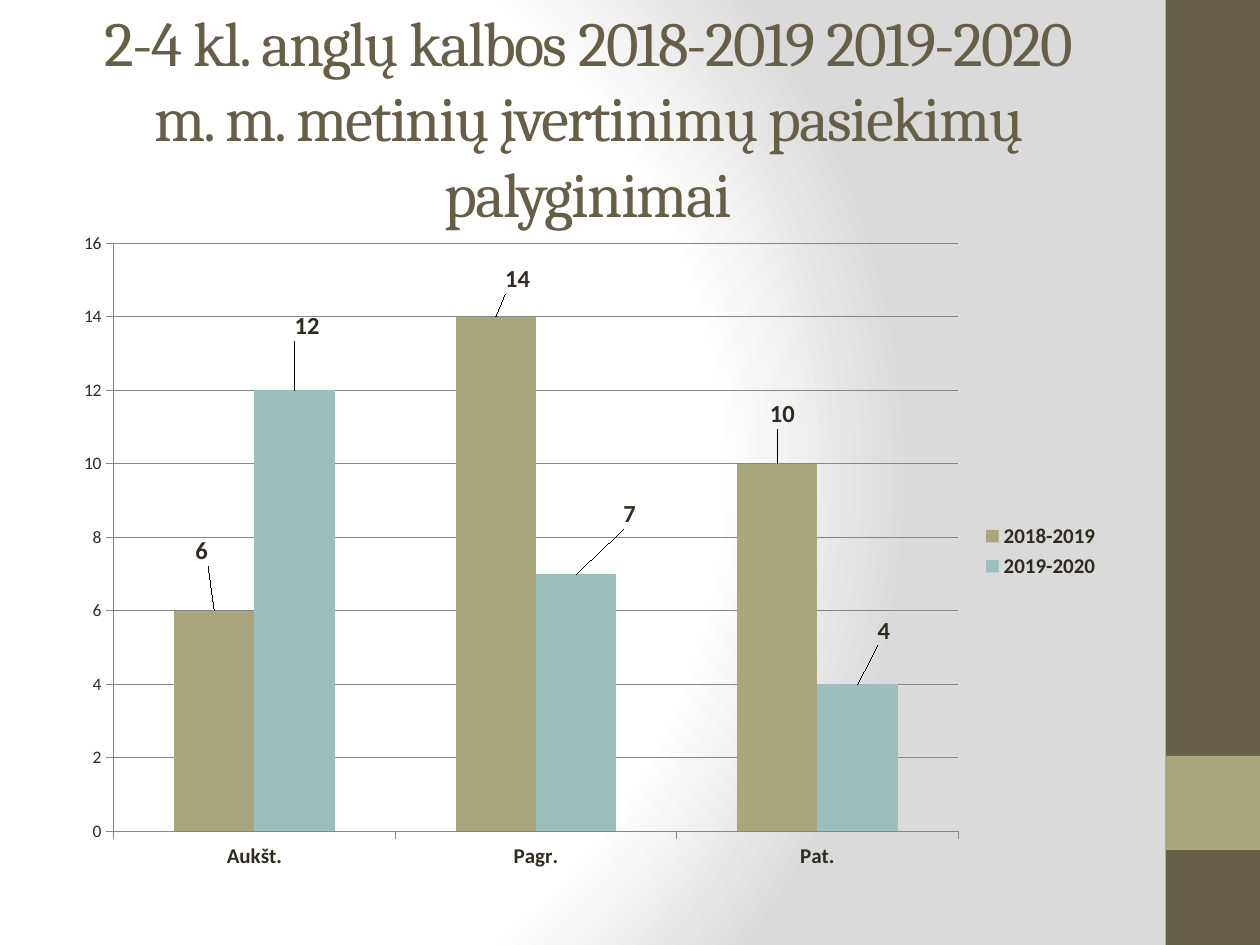
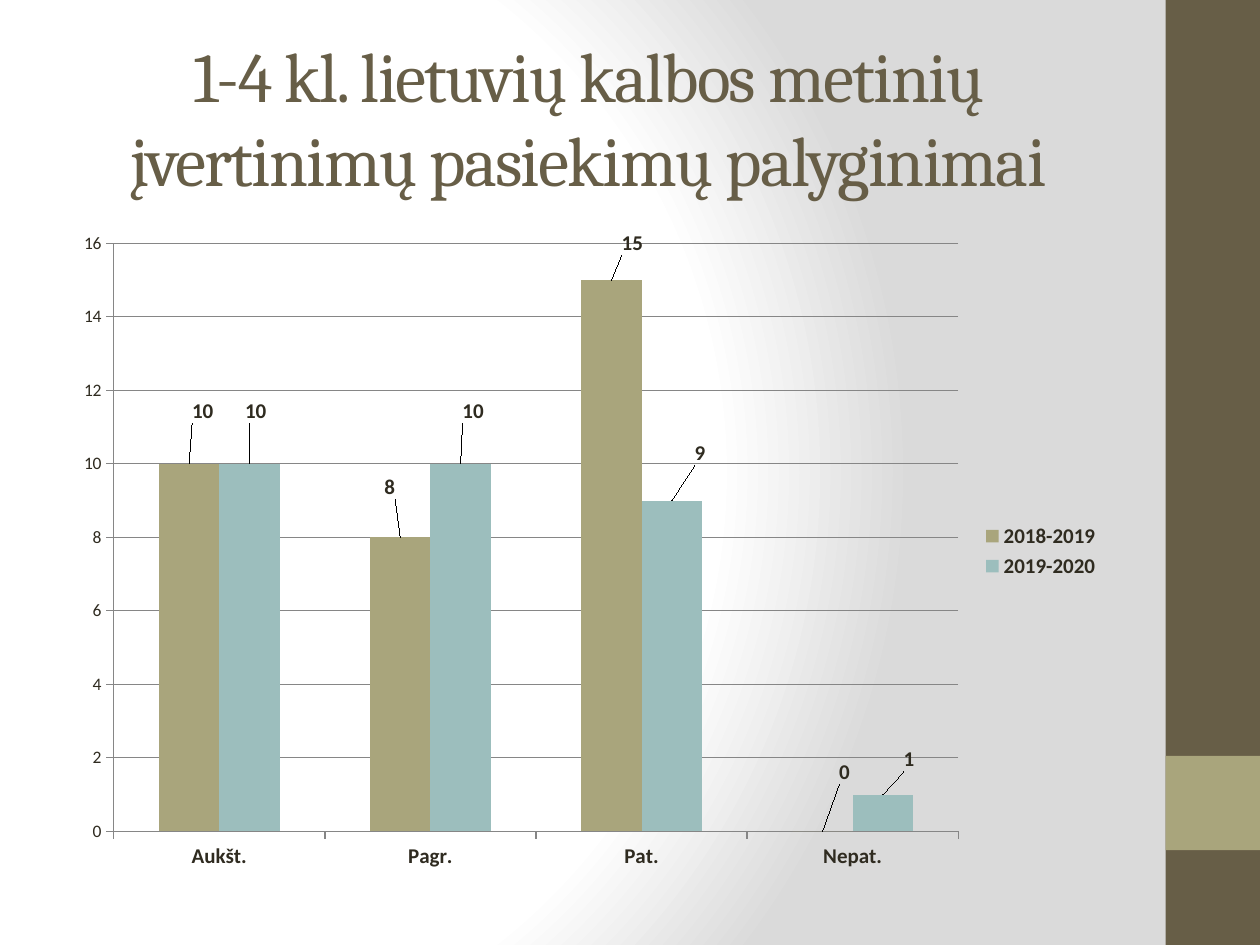
from lxml import etree
from pptx import Presentation
from pptx.chart.data import CategoryChartData
from pptx.dml.color import RGBColor
from pptx.enum.chart import XL_CHART_TYPE, XL_LABEL_POSITION, XL_LEGEND_POSITION, XL_TICK_MARK
from pptx.enum.shapes import MSO_SHAPE
from pptx.enum.text import MSO_ANCHOR, MSO_AUTO_SIZE, PP_ALIGN
from pptx.oxml import parse_xml
from pptx.oxml.ns import nsdecls, qn
from pptx.util import Cm, Pt

COLUMN = XL_CHART_TYPE.COLUMN_CLUSTERED
ABOVE = XL_LABEL_POSITION.OUTSIDE_END
RIGHT = XL_LEGEND_POSITION.RIGHT
OUT, NONE = XL_TICK_MARK.OUTSIDE, XL_TICK_MARK.NONE
RECT = MSO_SHAPE.RECTANGLE
MIDDLE, FIXED, CENTER = MSO_ANCHOR.MIDDLE, MSO_AUTO_SIZE.NONE, PP_ALIGN.CENTER

COLORS = {
    "brown": "675E47", "olive": "A9A57C", "teal": "9CBEBD",
    "ink": "2F2B20", "grid": "868686", "white": "FFFFFF", "gray": "DADADA",
}
HEAD, BODY = "Cambria", "Calibri"
WIDE, HIGH = 25.4, 19.05
TITLE = (1.27, 0.76, 21.16, 3.18)
CHART = (1.27, 4.44, 21.16, 13.34)
BANDS = [("brown", (23.5, 0, 1.9, HIGH)), ("olive", (23.5, 15.24, 1.9, 1.9))]
STOPS = [(0, "white"), (75, "white"), (100, "gray")]

# Label shifts are percentages of the chart's width and height.
SLIDES = [
    {
        "title": "2-4 kl. anglų kalbos 2018-2019 2019-2020 m. m. metinių įvertinimų pasiekimų palyginimai",
        "size": 36, "label": 14,
        "cats": ["Aukšt.", "Pagr.", "Pat."],
        "series": [
            ("2018-2019", "olive", [6, 14, 10], [(-1.2, -6), (2.1, -2.7), (0.5, -4.5)]),
            ("2019-2020", "teal", [12, 7, 4], [(1.2, -6.7), (5.1, -6), (2.5, -5.1)]),
        ],
    },
    {
        "title": "1-4 kl. lietuvių kalbos metinių įvertinimų pasiekimų palyginimai",
        "size": 40, "label": 12,
        "cats": ["Aukšt.", "Pagr.", "Pat.", "Nepat."],
        "series": [
            ("2018-2019", "olive", [10, 8, 15, 0],
             [(1.3, -5.3), (-1, -5), (2, -3), (2.1, -6.3)]),
            ("2019-2020", "teal", [10, 10, 9, 1],
             [(0.6, -5.3), (1.2, -5.3), (2.7, -4.5), (2.5, -2.7)]),
        ],
    },
]


def rgb(name):
    return RGBColor.from_string(COLORS[name])


def place(box):
    return [Cm(n) for n in box]


def style(font, size, color="ink", face=BODY, bold=False):
    font.size, font.name, font.bold = Pt(size), face, bold
    font.color.rgb = rgb(color)


def write(shape, text, size, color, face, space):
    frame = shape.text_frame
    frame.word_wrap, frame.auto_size = True, FIXED
    frame.vertical_anchor = MIDDLE
    para = frame.paragraphs[0]
    para.alignment = CENTER
    run = para.add_run()
    run.text = text
    style(run.font, size, color, face)
    run.font._element.set("spc", str(space * 100))


def paint(master):
    master.background.fill.solid()
    props = master._element.find(".//" + qn("p:bgPr"))
    stops = "".join(
        f'<a:gs pos="{pos * 1000}"><a:srgbClr val="{COLORS[name]}"/></a:gs>'
        for pos, name in STOPS)
    grad = parse_xml(
        f'<a:gradFill {nsdecls("a")} rotWithShape="1"><a:gsLst>{stops}</a:gsLst>'
        '<a:path path="circle"><a:fillToRect l="20000" t="50000" r="100000" b="50000"/>'
        '</a:path></a:gradFill>')
    props.replace(props.find(qn("a:solidFill")), grad)


def add_bands(slide):
    for color, box in BANDS:
        band = slide.shapes.add_shape(RECT, *place(box))
        band.shadow.inherit = False
        band.fill.solid()
        band.fill.fore_color.rgb = rgb(color)
        band.line.fill.background()


def shift(label, move):
    layout = etree.Element(qn("c:layout"))
    manual = etree.SubElement(layout, qn("c:manualLayout"))
    for axis, part in zip("xy", move):
        etree.SubElement(manual, qn("c:" + axis)).set("val", f"{part / 100:.3f}")
    old = label.find(qn("c:layout"))
    if old is not None:
        label.remove(old)
    label.find(qn("c:idx")).addnext(layout)


def set_axis(axis, size, bold):
    axis.major_tick_mark, axis.minor_tick_mark = OUT, NONE
    style(axis.tick_labels.font, size, bold=bold)
    draw(axis.format.line)


def draw(line):
    line.color.rgb = rgb("grid")
    line.width = Pt(0.75)


def add_bars(slide, page):
    data = CategoryChartData()
    data.categories = page["cats"]
    for name, _, vals, _ in page["series"]:
        data.add_series(name, vals)
    chart = slide.shapes.add_chart(COLUMN, *place(CHART), data).chart
    style(chart.font, 10)
    chart.has_title = False
    chart.has_legend = True
    chart.legend.position = RIGHT
    chart.legend.include_in_layout = False
    style(chart.legend.font, 12, bold=True)
    set_axis(chart.category_axis, 12, True)
    axis = chart.value_axis
    set_axis(axis, 10, False)
    axis.minimum_scale, axis.maximum_scale, axis.major_unit = 0, 16, 2
    axis.has_major_gridlines = True
    draw(axis.major_gridlines.format.line)
    plot = chart.plots[0]
    plot.gap_width, plot.overlap, plot.vary_by_categories = 150, 0, False
    for bars, (_, color, _, moves) in zip(plot.series, page["series"]):
        bars.format.fill.solid()
        bars.format.fill.fore_color.rgb = rgb(color)
        bars.data_labels.show_value = True
        style(bars.data_labels.font, page["label"], bold=True)
        for i in range(len(moves)):
            label = bars.points[i].data_label
            style(label.font, page["label"], bold=True)
            label.position = ABOVE
        for label, move in zip(bars._element.iter(qn("c:dLbl")), moves):
            shift(label, move)


def main():
    deck = Presentation()
    deck.slide_width, deck.slide_height = Cm(WIDE), Cm(HIGH)
    paint(deck.slide_master)
    for page in SLIDES:
        slide = deck.slides.add_slide(deck.slide_layouts[5])
        add_bands(slide)
        title = slide.shapes.title
        title.left, title.top, title.width, title.height = place(TITLE)
        write(title, page["title"], size=page["size"], color="brown", face=HEAD, space=-1)
        add_bars(slide, page)
    deck.save("out.pptx")


if __name__ == "__main__":
    main()
